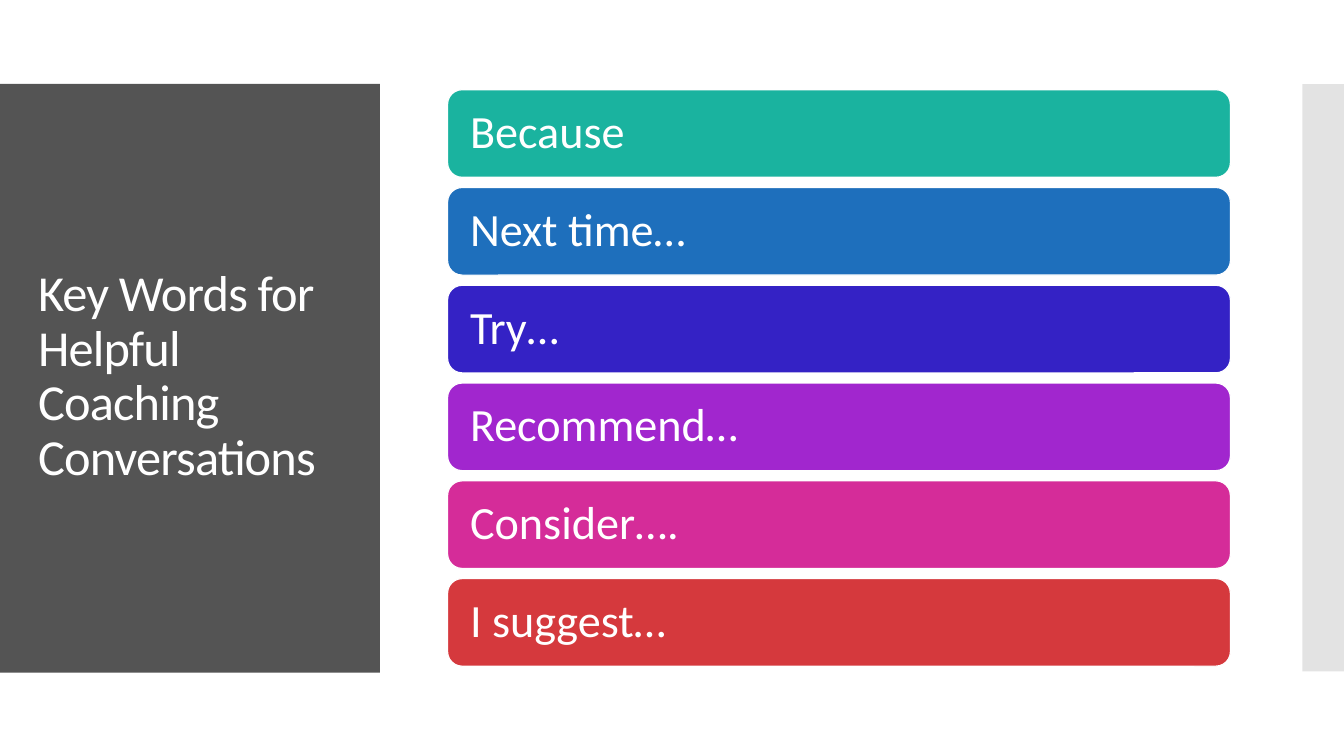
from dataclasses import dataclass

from lxml.etree import SubElement
from pptx import Presentation
from pptx.dml.color import RGBColor
from pptx.enum.shapes import MSO_SHAPE
from pptx.enum.text import MSO_ANCHOR, MSO_AUTO_SIZE, PP_ALIGN
from pptx.oxml.ns import qn
from pptx.shapes.autoshape import Shape
from pptx.slide import Slide
from pptx.util import Pt

COLOURS = {
    "white": "FFFFFF",
    "charcoal": "545454",
    "grey": "C8C8C8",
    "teal": "1AB39F",
    "blue": "1E6FBC",
    "indigo": "3422C5",
    "purple": "A126CE",
    "pink": "D52C99",
    "red": "D5393D",
}
FONT = "Calibri"
BAR_LEFT, BAR_TOP, BAR_WIDTH, BAR_HEIGHT = 319.7, 64.1, 559.2, 62.6
BAR_PITCH = 69.84
BAR_INSET = 13


@dataclass(frozen=True)
class Frame:
    left: float
    top: float
    width: float
    height: float


@dataclass(frozen=True)
class KeyWord:
    text: str
    colour: str


KEY_WORDS = [
    KeyWord("Because", "teal"),
    KeyWord("Next time…", "blue"),
    KeyWord("Try…", "indigo"),
    KeyWord("Recommend…", "purple"),
    KeyWord("Consider….", "pink"),
    KeyWord("I suggest…", "red"),
]


def colour_of(name: str) -> RGBColor:
    return RGBColor.from_string(COLOURS[name])


def add_block(page: Slide, kind: MSO_SHAPE, frame: Frame, colour: str) -> Shape:
    block = page.shapes.add_shape(
        kind, Pt(frame.left), Pt(frame.top), Pt(frame.width), Pt(frame.height)
    )
    block.shadow.inherit = False
    block.fill.solid()
    block.fill.fore_color.rgb = colour_of(colour)
    block.line.fill.background()
    return block


def write_text(box: Shape, text: str, size: float) -> None:
    body = box.text_frame
    body.word_wrap = True
    body.auto_size = MSO_AUTO_SIZE.NONE
    body.vertical_anchor = MSO_ANCHOR.MIDDLE
    para = body.paragraphs[0]
    para.text = text
    para.alignment = PP_ALIGN.LEFT
    para.line_spacing = 0.9
    para.font.name = FONT
    para.font.size = Pt(size)
    para.font.color.rgb = colour_of("white")


def add_side_panels(page: Slide) -> None:
    add_block(page, MSO_SHAPE.RECTANGLE, Frame(0, 60, 271.4, 420.5), "charcoal")
    strip = add_block(page, MSO_SHAPE.RECTANGLE, Frame(930.4, 60, 29.6, 419.5), "grey")
    tint = strip.element.spPr.find(qn("a:solidFill"))[0]
    SubElement(tint, qn("a:alpha"), val="50000")


def place_title(page: Slide) -> None:
    title = page.shapes.title
    title.left, title.top, title.width, title.height = Pt(20), Pt(88.5), Pt(232), Pt(362)
    write_text(title, "Key Words for Helpful Coaching Conversations", 36)
    for span in title.text_frame.paragraphs[0].runs:
        span._r.get_or_add_rPr().set("spc", "-60")
    page.shapes.element.append(title.element)


def add_key_word(page: Slide, row: int, key_word: KeyWord) -> None:
    frame = Frame(BAR_LEFT, BAR_TOP + row * BAR_PITCH, BAR_WIDTH, BAR_HEIGHT)
    bar = add_block(page, MSO_SHAPE.ROUNDED_RECTANGLE, frame, key_word.colour)
    bar.line.color.rgb = colour_of("white")
    bar.line.width = Pt(0.85)
    write_text(bar, key_word.text, 33)
    body = bar.text_frame
    body.margin_left = body.margin_right = Pt(BAR_INSET)
    body.margin_top = body.margin_bottom = Pt(BAR_INSET)


def main() -> None:
    deck = Presentation()
    deck.slide_width, deck.slide_height = Pt(960), Pt(540)
    page = deck.slides.add_slide(deck.slide_layouts.get_by_name("Title Only"))
    add_side_panels(page)
    place_title(page)
    for row, key_word in enumerate(KEY_WORDS):
        add_key_word(page, row, key_word)
    deck.save("out.pptx")


if __name__ == "__main__":
    main()
